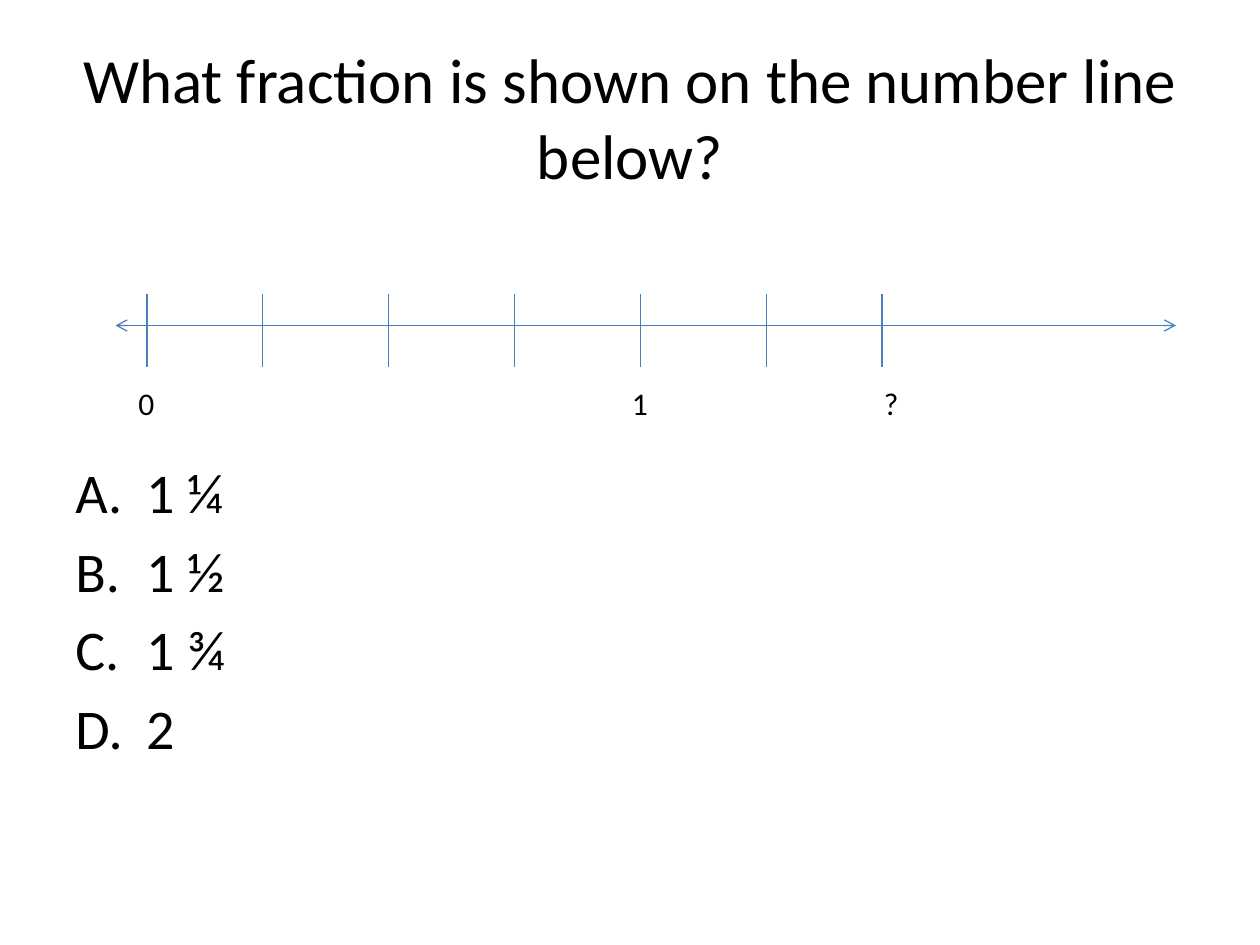
from lxml.etree import SubElement
from pptx import Presentation
from pptx.dml.color import RGBColor
from pptx.enum.shapes import MSO_CONNECTOR
from pptx.enum.text import MSO_ANCHOR, MSO_AUTO_SIZE, PP_ALIGN
from pptx.oxml.ns import qn
from pptx.util import Pt

BLACK = RGBColor(0x00, 0x00, 0x00)
BLUE = RGBColor(0x4B, 0x7E, 0xBC)
FONT = "Calibri"


class Quiz:
    """Holds the style and the current slide."""

    def __init__(self, deck):
        self.slide = deck.slides.add_slide(deck.slide_layouts[5])
        self.shapes = self.slide.shapes

    def add_text(self, para, text, size):
        run = para.add_run()
        run.text = text
        run.font.name = FONT
        run.font.size = Pt(size)
        run.font.color.rgb = BLACK

    def title(self, text, left, top, width, height):
        box = self.shapes.title
        box.left, box.top = Pt(left), Pt(top)
        box.width, box.height = Pt(width), Pt(height)
        frame = box.text_frame
        frame.auto_size = MSO_AUTO_SIZE.NONE
        frame.vertical_anchor = MSO_ANCHOR.MIDDLE
        para = frame.paragraphs[0]
        para.alignment = PP_ALIGN.CENTER
        self.add_text(para, text, 36)

    def box(self, left, top, width, height, wrap=True):
        box = self.shapes.add_textbox(Pt(left), Pt(top), Pt(width), Pt(height))
        box.text_frame.word_wrap = wrap
        return box.text_frame

    def label(self, text, left, top, width, wrap=True):
        frame = self.box(left, top, width, 29, wrap)
        frame.auto_size = MSO_AUTO_SIZE.SHAPE_TO_FIT_TEXT
        self.add_text(frame.paragraphs[0], text, 18)

    def choices(self, items, left, top, width, height):
        frame = self.box(left, top, width, height)
        for i, item in enumerate(items):
            para = frame.add_paragraph() if i else frame.paragraphs[0]
            props = para._p.get_or_add_pPr()
            props.set("marL", str(Pt(40.5)))
            props.set("indent", str(Pt(-40.5)))
            if i:
                para.space_before = Pt(6.4)
            SubElement(props, qn("a:buFont"), typeface="+mj-lt")
            SubElement(props, qn("a:buAutoNum"), type="alphaUcPeriod")
            self.add_text(para, item, 32)

    def line(self, x1, y1, x2, y2, arrows=False):
        line = self.shapes.add_connector(
            MSO_CONNECTOR.STRAIGHT, Pt(x1), Pt(y1), Pt(x2), Pt(y2))
        line.line.color.rgb = BLUE
        line.line.width = Pt(0.75)
        props = line._element.spPr
        if arrows:
            for end in ("a:headEnd", "a:tailEnd"):
                SubElement(props.find(qn("a:ln")), qn(end), type="arrow")
        SubElement(props, qn("a:effectLst"))


def main():
    deck = Presentation()
    deck.slide_width, deck.slide_height = Pt(720), Pt(540)
    quiz = Quiz(deck)

    # Question and answers
    quiz.title("What fraction is shown on the number line below?",
               36, 21.6, 648, 90)
    quiz.choices(["1 ¼", "1 ½", "1 ¾", "2"], 36, 258, 648, 224.6)

    # Number line: even inner ticks, shorter steps at both ends
    quiz.line(66, 186, 672, 186, arrows=True)
    for x in [84, *range(150, 439, 72), 504]:
        quiz.line(x, 168, x, 210)

    # Tick labels
    quiz.label("0", 72, 216, 54)
    quiz.label("1", 354, 216, 54)
    quiz.label("?", 498, 216, 23, wrap=False)

    deck.save("out.pptx")


if __name__ == "__main__":
    main()
